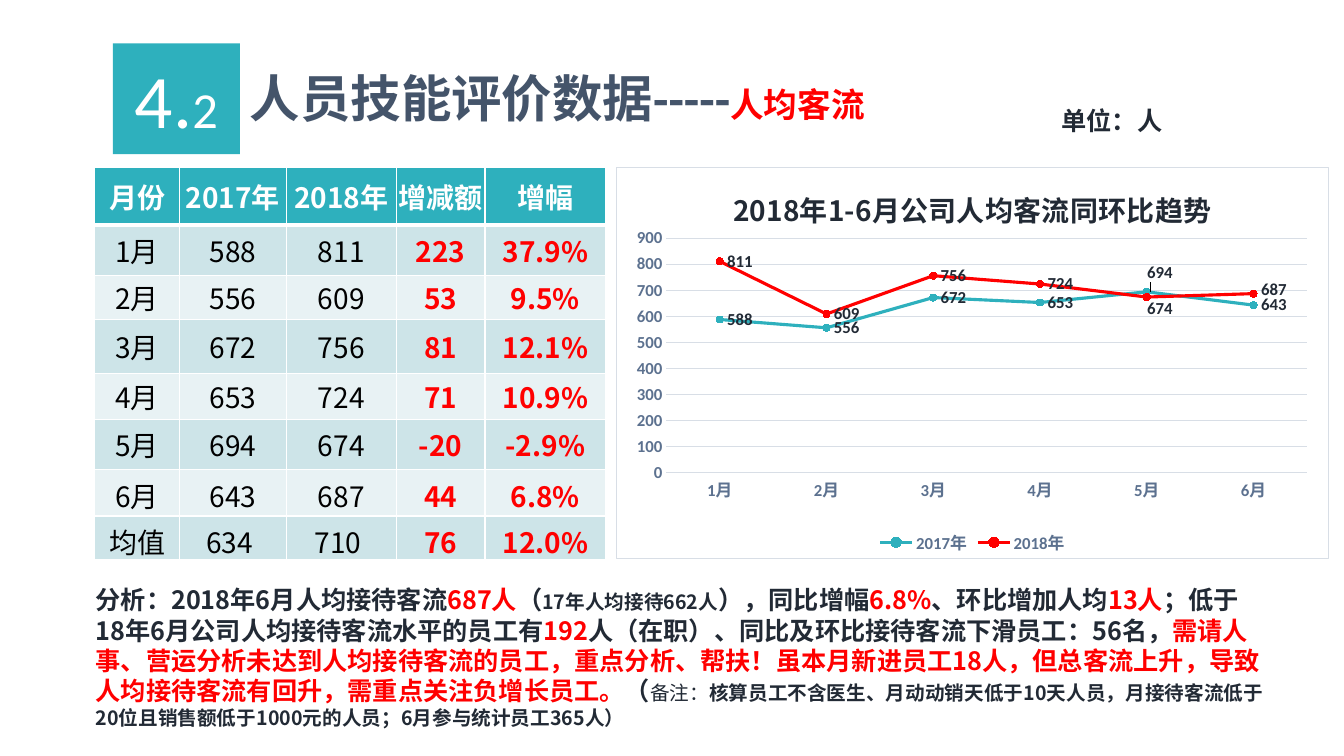
"""Build the slide on visitors per employee: table, trend chart and analysis."""
import pptx
import pptx.chart.data
import pptx.dml.color
import pptx.enum.chart
import pptx.enum.text
import pptx.oxml
import pptx.oxml.ns
import pptx.util
from dataclasses import dataclass
from pptx.util import Inches


@dataclass(frozen=True)
class Theme:
    teal: str = "2EB0BD"
    red: str = "FF0000"
    ink: str = "222A35"
    slate: str = "44546A"
    axis: str = "5C718F"
    grid: str = "D8DEE6"
    white: str = "FFFFFF"
    black: str = "000000"
    bands: tuple = ("CDE4E8", "E8F2F4")
    latin: str = "Calibri"
    cjk: str = "Noto Sans CJK SC"
    number: int = 54
    title: int = 36
    subtitle: int = 24
    table: int = 20
    body: int = 18
    note: int = 14
    label: int = 12


theme = Theme()
NS = 'xmlns:c="http://schemas.openxmlformats.org/drawingml/2006/chart" xmlns:a="http://schemas.openxmlformats.org/drawingml/2006/main"'


def style(font, color, **values):
    for key, value in values.items():
        setattr(font, key, value)
    font.color.rgb = pptx.dml.color.RGBColor.from_string(color)


def write(frame, runs, name, bold=True, align=None):
    frame.word_wrap = True
    paragraph = frame.paragraphs[0]
    paragraph.alignment = align
    for text, color, size, *weight in runs:
        run = paragraph.add_run()
        run.text = text
        style(run.font, color, name=name, size=pptx.util.Pt(size), bold=weight[0] if weight else bold)
        east_asian = pptx.oxml.parse_xml(f'<a:ea {NS} typeface="{theme.cjk}"/>')
        run.font._element.find(pptx.oxml.ns.qn("a:latin")).addnext(east_asian)


rgb = pptx.dml.color.RGBColor.from_string
center = pptx.enum.text.PP_ALIGN.CENTER
middle = pptx.enum.text.MSO_ANCHOR.MIDDLE

deck = pptx.Presentation()
deck.slide_width, deck.slide_height = Inches(13.33), Inches(7.5)
slide = deck.slides.add_slide(deck.slide_layouts[6])

heading = slide.shapes.add_group_shape()
badge = heading.shapes.add_shape(1, Inches(1.12), Inches(0.43), Inches(1.26), Inches(1.1))
badge.shadow.inherit = False
badge.fill.solid()
badge.fill.fore_color.rgb = rgb(theme.teal)
badge.line.fill.background()
badge.text_frame.vertical_anchor = middle
write(badge.text_frame, [("4.", theme.white, theme.number), ("2", theme.white, theme.title)],
      theme.latin, False, center)

title = heading.shapes.add_textbox(Inches(2.38), Inches(0.62), Inches(9.33), Inches(0.71))
write(title.text_frame, [("人员技能评价数据-----", theme.slate, theme.title),
                         ("人均客流", theme.red, theme.subtitle)], theme.latin)

unit = slide.shapes.add_textbox(Inches(10.43), Inches(1), Inches(1.28), Inches(0.42))
write(unit.text_frame, [("单位：人", theme.ink, theme.body)], theme.latin)

analysis = slide.shapes.add_textbox(Inches(0.85), Inches(5.75), Inches(11.81), Inches(1.55))
write(analysis.text_frame, [
    ("分析：2018年6月人均接待客流", theme.ink, theme.body),
    ("687人", theme.red, theme.body),
    ("（", theme.ink, theme.body),
    ("17年人均接待662人", theme.ink, theme.note),
    ("），同比增幅", theme.ink, theme.body),
    ("6.8%", theme.red, theme.body),
    ("、环比增加人均", theme.ink, theme.body),
    ("13人", theme.red, theme.body),
    ("；低于18年6月公司人均接待客流水平的员工有", theme.ink, theme.body),
    ("192", theme.red, theme.body),
    ("人（在职）、同比及环比接待客流下滑员工：56名，", theme.ink, theme.body),
    ("需请人事、营运分析未达到人均接待客流的员工，重点分析、帮扶！虽本月新进员工18人，"
     "但总客流上升，导致人均接待客流有回升，需重点关注负增长员工。", theme.red, theme.body),
    ("（", theme.ink, theme.body),
    ("备注：", theme.ink, theme.note, False),
    ("核算员工不含医生、月动动销天低于10天人员，月接待客流低于20位且销售额低于1000元的人员；"
     "6月参与统计员工365人）", theme.ink, theme.note),
], theme.cjk)

months = ["1月", "2月", "3月", "4月", "5月", "6月"]
visitors = {"2017年": [588, 556, 672, 653, 694, 643], "2018年": [811, 609, 756, 724, 674, 687]}
changes = ["223", "53", "81", "71", "-20", "44"]
rates = ["37.9%", "9.5%", "12.1%", "10.9%", "-2.9%", "6.8%"]
rows = [["月份", *visitors, "增减额", "增幅"],
        *zip(months, *visitors.values(), changes, rates),
        ["均值", "634 ", "710 ", "76", "12.0%"]]
widths = [0.84, 1.06, 1.09, 0.88, 1.2]
heights = [0.57, 0.5, 0.44, 0.54, 0.45, 0.5, 0.46, 0.43]
table = slide.shapes.add_table(len(rows), len(widths), Inches(0.94), Inches(1.66),
                               Inches(5.06), Inches(3.89)).table
for column, width in zip(table.columns, widths):
    column.width = Inches(width)
for r, (row, height) in enumerate(zip(rows, heights)):
    table.rows[r].height = Inches(height)
    for c, text in enumerate(row):
        cell = table.cell(r, c)
        cell.vertical_anchor = middle
        if r < 5:
            for side in ("left", "right", "top", "bottom"):
                setattr(cell, f"margin_{side}", 0)
        color = theme.white if r == 0 else theme.red if c > 2 else theme.black
        write(cell.text_frame, [(str(text), color, theme.table)], theme.cjk, r == 0 or c > 2, center)
        for edge in ("lnL", "lnR", "lnT", "lnB"):
            thick = (r == 0 and edge == "lnB") or (r == 1 and edge == "lnT")
            cell._tc.get_or_add_tcPr().append(pptx.oxml.parse_xml(
                f'<a:{edge} {NS} w="{pptx.util.Pt(3 if thick else 1)}"><a:solidFill>'
                f'<a:srgbClr val="{theme.white}"/></a:solidFill></a:{edge}>'))
        cell.fill.solid()
        cell.fill.fore_color.rgb = rgb(theme.bands[(r - 1) % 2] if r else theme.teal)

trend = pptx.chart.data.CategoryChartData()
trend.categories = months
for year, counts in visitors.items():
    trend.add_series(year, counts)
chart = slide.shapes.add_chart(pptx.enum.chart.XL_CHART_TYPE.LINE_MARKERS, Inches(6.11), Inches(1.66),
                               Inches(7.07), Inches(3.89), trend).chart
style(chart.font, theme.ink, name=theme.latin, size=pptx.util.Pt(10))
chart.has_title = True
write(chart.chart_title.text_frame, [("2018年1-6月公司人均客流同环比趋势", theme.ink, theme.table)], theme.cjk)
chart.chart_title.include_in_layout = False
chart.has_legend = True
chart.legend.position = pptx.enum.chart.XL_LEGEND_POSITION.BOTTOM
chart.legend.include_in_layout = False
label_format = {"name": theme.latin, "size": pptx.util.Pt(theme.label), "bold": True}
style(chart.legend.font, theme.axis, **label_format)

months_axis, count_axis = chart.category_axis, chart.value_axis
for axis in (months_axis, count_axis):
    axis.major_tick_mark = axis.minor_tick_mark = pptx.enum.chart.XL_TICK_MARK.NONE
    style(axis.tick_labels.font, theme.axis, **label_format)
count_axis.minimum_scale, count_axis.maximum_scale, count_axis.major_unit = 0, 900, 100
count_axis.format.line.fill.background()
for line in (months_axis.format.line, count_axis.major_gridlines.format.line):
    line.color.rgb = rgb(theme.grid)
    line.width = pptx.util.Pt(0.75)

label_shifts = [{4: (-0.01, -0.05)}, {4: (-0.01, 0.03), 5: (0, -0.01)}]
right = pptx.enum.chart.XL_LABEL_POSITION.RIGHT
for series, color, shifts in zip(chart.plots[0].series, (theme.teal, theme.red), label_shifts):
    series.smooth = False
    series.format.line.color.rgb = rgb(color)
    series.format.line.width = pptx.util.Pt(2.25)
    series.marker.style = pptx.enum.chart.XL_MARKER_STYLE.CIRCLE
    series.marker.size = 5
    series.marker.format.fill.solid()
    series.marker.format.fill.fore_color.rgb = rgb(color)
    series.marker.format.line.color.rgb = rgb(color)
    series.data_labels.show_value = True
    series.data_labels.position = right
    style(series.data_labels.font, theme.ink, **label_format)
    for index, (dx, dy) in shifts.items():
        label = series.points[index].data_label
        label.position = right
        style(label.font, theme.ink, **label_format)
        series._element.xpath(f"c:dLbls/c:dLbl/c:idx[@val={index}]")[0].addnext(pptx.oxml.parse_xml(
            f'<c:layout {NS}><c:manualLayout><c:x val="{dx}"/><c:y val="{dy}"/></c:manualLayout></c:layout>'))

plot_area = chart._chartSpace.chart.plotArea
for layout in plot_area.xpath("c:layout"):
    plot_area.remove(layout)
plot_area.insert(0, pptx.oxml.parse_xml(
    f'<c:layout {NS}><c:manualLayout><c:layoutTarget val="inner"/><c:xMode val="edge"/><c:yMode val="edge"/>'
    '<c:x val="0.07"/><c:y val="0.18"/><c:w val="0.9"/><c:h val="0.6"/></c:manualLayout></c:layout>'))
chart._chartSpace.chart.addnext(pptx.oxml.parse_xml(
    f'<c:spPr {NS}><a:solidFill><a:srgbClr val="{theme.white}"/></a:solidFill><a:ln w="{pptx.util.Pt(0.75)}">'
    f'<a:solidFill><a:srgbClr val="{theme.grid}"/></a:solidFill></a:ln></c:spPr>'))

deck.save("out.pptx")
